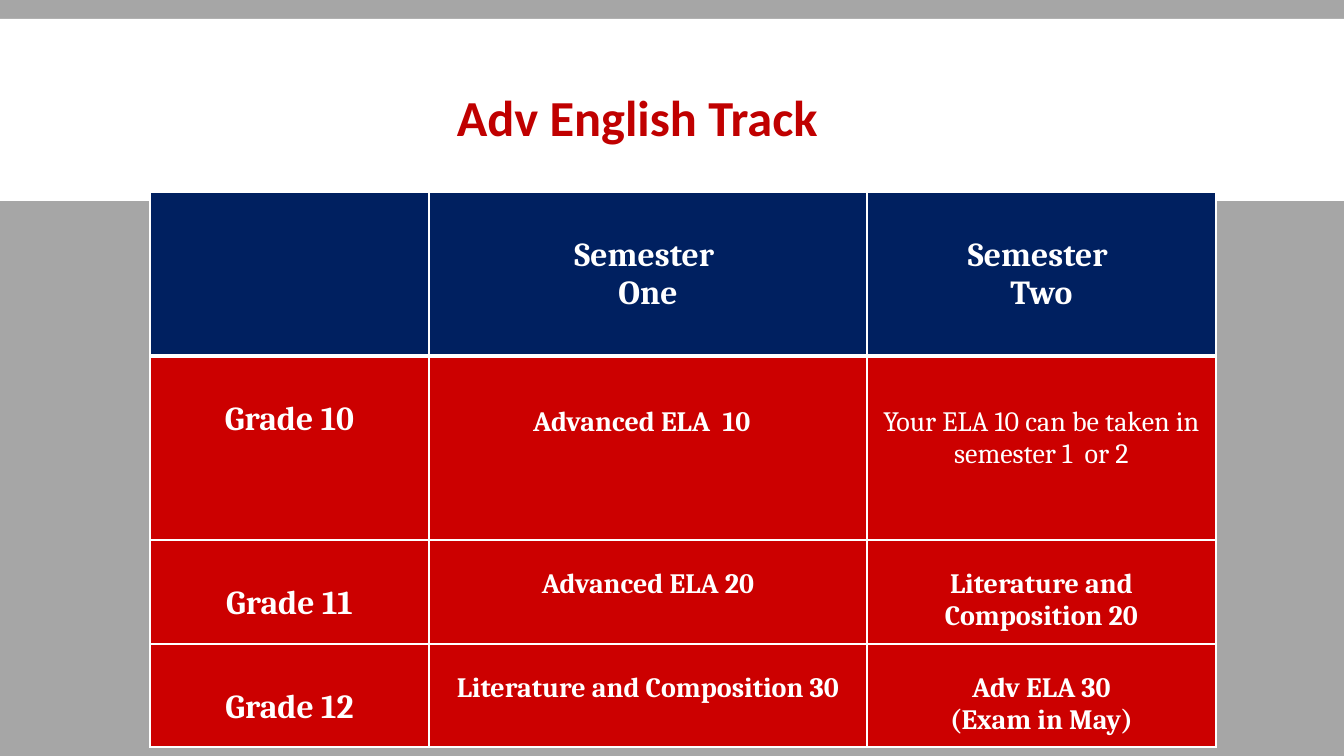
from lxml.etree import SubElement
from pptx import Presentation
from pptx.dml.color import RGBColor
from pptx.enum.shapes import MSO_SHAPE as Shape
from pptx.enum.text import PP_ALIGN as Align
from pptx.oxml.ns import qn
from pptx.util import Pt

PX = 914400 / 100.8
GREY = RGBColor(0xA6, 0xA6, 0xA6)
WHITE = RGBColor(0xFF, 0xFF, 0xFF)
NAVY = RGBColor(0x00, 0x20, 0x60)
RED = RGBColor(0xCC, 0x00, 0x00)
DARK_RED = RGBColor(0xC0, 0x00, 0x00)


def px(*sizes):
    """Turn pixels into EMU."""
    return [round(size * PX) for size in sizes]


def write(frame, lines, look):
    """Fill a text frame with centred lines in one font."""
    frame.word_wrap = True
    for i, line in enumerate(lines):
        para = frame.paragraphs[0] if i == 0 else frame.add_paragraph()
        para.alignment = Align.CENTER
        run = para.add_run()
        run.text = line
        run.font.color.rgb = look["color"]
        for key in ("name", "size", "bold"):
            setattr(run.font, key, look[key])


deck = Presentation()
deck.slide_width, deck.slide_height = px(1344, 756)
slide = deck.slides.add_slide(deck.slide_layouts[6])
slide.background.fill.solid()
slide.background.fill.fore_color.rgb = GREY

band = slide.shapes.add_shape(Shape.RECTANGLE, *px(0, 19, 1344, 182))
band.shadow.inherit = False
band.fill.solid()
band.fill.fore_color.rgb = WHITE
band.line.fill.background()

title = slide.shapes.add_textbox(*px(181, 81, 913, 72))
write(title.text_frame, ["Adv English Track"],
      dict(name="Calibri", size=Pt(36), bold=True, color=DARK_RED))

widths = px(279, 438, 349)
heights = px(164, 184, 104, 103)
head = dict(name="Cambria", size=Pt(24), bold=True, color=WHITE)
body = dict(head, size=Pt(20))
plain = dict(body, bold=False)

# Each cell: lines, font, top margin in px
rows = [
    [([], head, 5),
     (["Semester ", "One"], head, 44),
     (["Semester ", "Two"], head, 44)],
    [(["Grade 10"], head, 44),
     (["Advanced ELA  10  "], body, 50),
     (["Your ELA 10 can be taken in semester 1  or 2"], plain, 50)],
    [(["Grade 11"], head, 44),
     (["Advanced ELA 20"], body, 28),
     (["Literature and Composition 20"], body, 28)],
    [(["Grade 12"], head, 44),
     (["Literature and Composition 30"], body, 28),
     (["Adv ELA 30", "(Exam in May)"], body, 28)],
]

grid = slide.shapes.add_table(
    len(rows), len(widths), *px(150, 192), sum(widths), sum(heights)).table
grid.horz_banding = False
for col, width in zip(grid.columns, widths):
    col.width = width
for row, height in zip(grid.rows, heights):
    row.height = height

for r, row in enumerate(rows):
    for c, (lines, look, top) in enumerate(row):
        cell = grid.cell(r, c)
        cell.margin_top = px(top)[0]
        write(cell.text_frame, lines, look)
        props = cell._tc.get_or_add_tcPr()
        for side in "LRTB":
            thick = (r, side) in ((0, "B"), (1, "T"))
            edge = SubElement(props, qn(f"a:ln{side}"), w=str(Pt(3 if thick else 1)))
            paint = SubElement(edge, qn("a:solidFill"))
            SubElement(paint, qn("a:srgbClr"), val=str(WHITE))
        cell.fill.solid()
        cell.fill.fore_color.rgb = NAVY if r == 0 else RED

deck.save("out.pptx")
